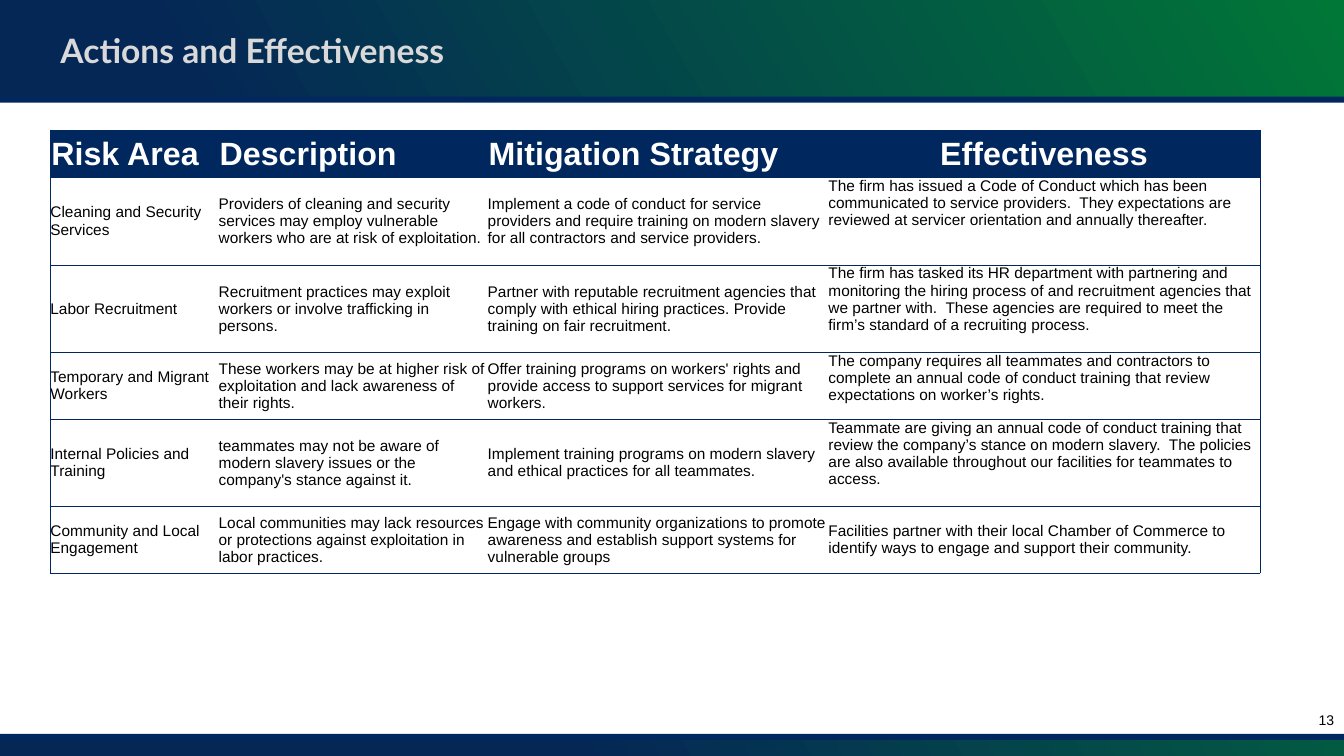
from lxml.etree import SubElement
from pptx import Presentation
from pptx.dml.color import RGBColor
from pptx.enum.shapes import MSO_SHAPE
from pptx.enum.text import MSO_ANCHOR, PP_ALIGN
from pptx.oxml.ns import qn
from pptx.util import Pt

TITLE = "Actions and Effectiveness"
PAGE_NUMBER = "13"
HEADERS = ["Risk Area", "Description", "Mitigation Strategy", "Effectiveness"]
RISKS = [
    ("Cleaning and Security Services",
     "Providers of cleaning and security services may employ vulnerable workers "
     "who are at risk of exploitation.",
     "Implement a code of conduct for service providers and require training on "
     "modern slavery for all contractors and service providers.",
     "The firm has issued a Code of Conduct which has been communicated to service "
     "providers.  They expectations are reviewed at servicer orientation and "
     "annually thereafter."),
    ("Labor Recruitment",
     "Recruitment practices may exploit workers or involve trafficking in persons.",
     "Partner with reputable recruitment agencies that comply with ethical hiring "
     "practices. Provide training on fair recruitment.",
     "The firm has tasked its HR department with partnering and monitoring the hiring "
     "process of and recruitment agencies that we partner with.  These agencies are "
     "required to meet the firm’s standard of a recruiting process."),
    ("Temporary and Migrant Workers",
     "These workers may be at higher risk of exploitation and lack awareness of "
     "their rights.",
     "Offer training programs on workers' rights and provide access to support "
     "services for migrant workers.",
     "The company requires all teammates and contractors to complete an annual code "
     "of conduct training that review expectations on worker’s rights."),
    ("Internal Policies and Training",
     "teammates may not be aware of modern slavery issues or the company's stance "
     "against it.",
     "Implement training programs on modern slavery and ethical practices for all "
     "teammates.",
     "Teammate are giving an annual code of conduct training that review the "
     "company’s stance on modern slavery.  The policies are also available "
     "throughout our facilities for teammates to access."),
    ("Community and Local Engagement",
     "Local communities may lack resources or protections against exploitation in "
     "labor practices.",
     "Engage with community organizations to promote awareness and establish "
     "support systems for vulnerable groups",
     "Facilities partner with their local Chamber of Commerce to identify ways to "
     "engage and support their community."),
]
COLUMN_WIDTHS = [120.2, 192.2, 243.4, 308.2]
ROW_HEIGHTS = [33.8, 62.6, 62.6, 47.5, 62.6, 47.5]
GRADIENT = [(0.32, "052756"), (1, "017737")]
NAVY, WHITE, BLACK, LIGHT_GREY = "00285F", "FFFFFF", "000000", "D9D9D9"
SLIDE_WIDTH, SLIDE_HEIGHT = 960, 540


def rgb(color):
    return RGBColor.from_string(color)


def style(paragraph, name, size, color, bold=False):
    font = paragraph.font
    font.name, font.size, font.bold = name, Pt(size), bold
    font.color.rgb = rgb(color)


def add_band(shapes, top, height, color=None):
    """Add a full-width rectangle; without a colour it takes the gradient."""
    band = shapes.add_shape(MSO_SHAPE.RECTANGLE, 0, Pt(top),
                            Pt(SLIDE_WIDTH), Pt(height))
    band.shadow.inherit = False
    band.line.fill.background()
    if color:
        band.fill.solid()
        band.fill.fore_color.rgb = rgb(color)
        return
    band.fill.gradient()
    band.fill.gradient_angle = 30
    for stop, (position, stop_color) in zip(band.fill.gradient_stops, GRADIENT):
        stop.position = position
        stop.color.rgb = rgb(stop_color)


def add_borders(cell, sides):
    properties = cell._tc.get_or_add_tcPr()
    for side in sides:
        line = SubElement(properties, qn(f"a:ln{side}"), w=str(Pt(0.5)))
        fill = SubElement(line, qn("a:solidFill"))
        SubElement(fill, qn("a:srgbClr"), val=NAVY)


def add_title(slide):
    title = slide.shapes.title
    title.left, title.top, title.width, title.height = Pt(36), Pt(7), Pt(782), Pt(60.5)
    title.text_frame.text = TITLE
    title.text_frame.vertical_anchor = MSO_ANCHOR.MIDDLE
    heading = title.text_frame.paragraphs[0]
    heading.alignment = PP_ALIGN.LEFT
    heading.line_spacing = 0.9
    style(heading, "Lato", 24, LIGHT_GREY, bold=True)
    title.element.getparent().append(title.element)  # in front of the bands


def add_page_number(shapes):
    box = shapes.add_textbox(Pt(933), Pt(504.7), Pt(27), Pt(19.4))
    box.text_frame.word_wrap = False
    box.text_frame.vertical_anchor = MSO_ANCHOR.MIDDLE
    box.text_frame.text = PAGE_NUMBER
    number = box.text_frame.paragraphs[0]
    number.alignment = PP_ALIGN.RIGHT
    number.space_after = Pt(6)
    style(number, "Arial", 10, BLACK)


def add_risk_table(shapes):
    rows = [HEADERS, *RISKS]
    last_row, last_column = len(rows) - 1, len(HEADERS) - 1
    frame = shapes.add_table(len(rows), len(HEADERS), Pt(36), Pt(92.9),
                             Pt(sum(COLUMN_WIDTHS)), Pt(sum(ROW_HEIGHTS)))
    table = frame.table
    table.horz_banding = False
    for style_id in frame.element.iter(qn("a:tableStyleId")):
        style_id.text = "{2D5ABB26-0587-4C30-8999-92F81FD0307C}"  # no style, no grid
    for column, width in zip(table.columns, COLUMN_WIDTHS):
        column.width = Pt(width)
    for row, height in zip(table.rows, ROW_HEIGHTS):
        row.height = Pt(height)

    for r, row in enumerate(rows):
        for c, words in enumerate(row):
            cell = table.cell(r, c)
            is_header = r == 0
            cell.text_frame.text = words
            paragraph = cell.text_frame.paragraphs[0]
            inset = Pt(0.7 if is_header else 0)
            cell.margin_left = cell.margin_right = cell.margin_top = inset
            cell.margin_bottom = 0
            top_aligned = c == last_column and 0 < r < last_row
            cell.vertical_anchor = MSO_ANCHOR.TOP if top_aligned else MSO_ANCHOR.MIDDLE
            add_borders(cell, {0: "LTB", last_column: "RTB"}.get(c, "TB"))
            if is_header:
                cell.fill.solid()
                cell.fill.fore_color.rgb = rgb(NAVY)
                style(paragraph, "Arial", 23, WHITE, bold=True)
                if c == last_column:
                    paragraph.alignment = PP_ALIGN.CENTER
            else:
                cell.fill.background()
                style(paragraph, "Arial", 11, BLACK)


def main():
    deck = Presentation()
    deck.slide_width, deck.slide_height = Pt(SLIDE_WIDTH), Pt(SLIDE_HEIGHT)
    slide = deck.slides.add_slide(deck.slide_layouts[5])
    add_band(slide.shapes, 0, SLIDE_HEIGHT)
    add_band(slide.shapes, 71.3, 454.3, WHITE)
    for top in (69, 524.2):
        add_band(slide.shapes, top, 4.3, NAVY)
    add_title(slide)
    add_page_number(slide.shapes)
    add_risk_table(slide.shapes)
    deck.save("out.pptx")


if __name__ == "__main__":
    main()
